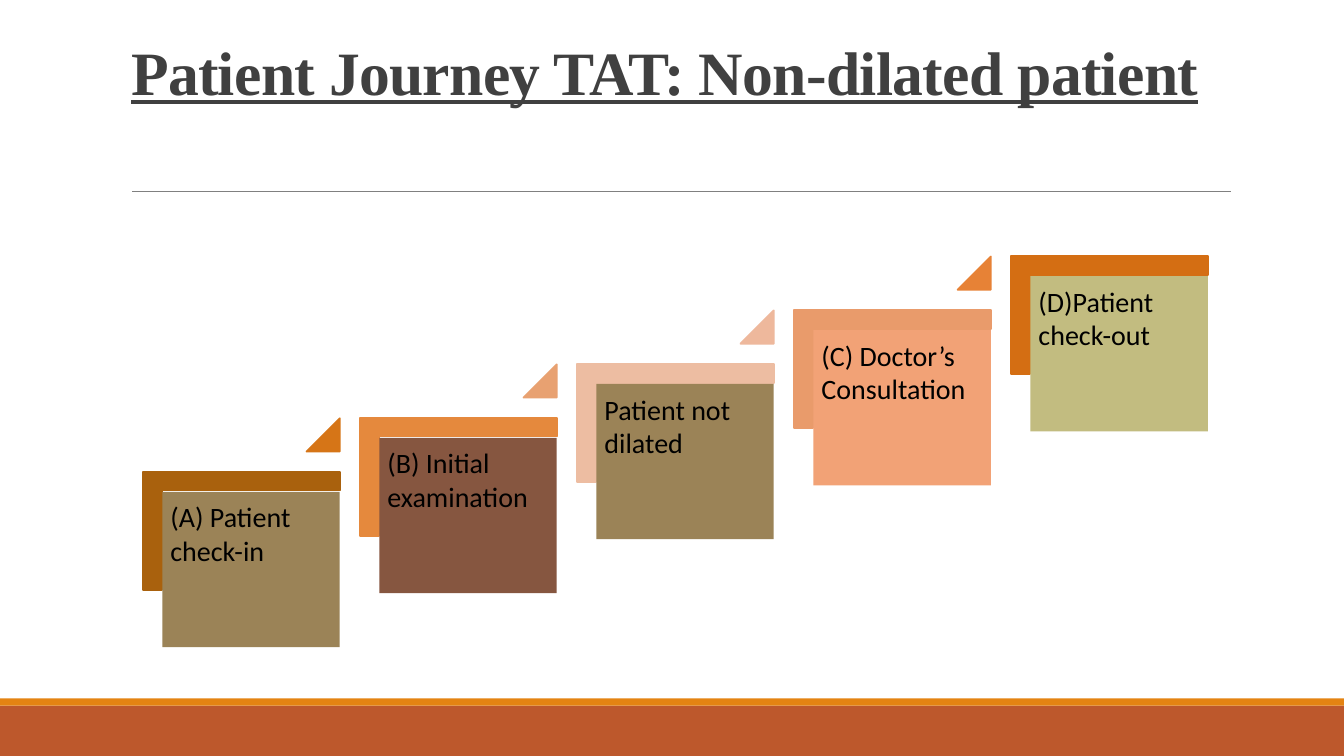
"""Build the patient journey slide: a staircase of five steps."""
from dataclasses import dataclass

from lxml import etree
from pptx import Presentation
from pptx.dml.color import RGBColor
from pptx.enum.shapes import MSO_CONNECTOR, MSO_SHAPE
from pptx.enum.text import MSO_ANCHOR, MSO_AUTO_SIZE, PP_ALIGN
from pptx.oxml.ns import qn
from pptx.util import Inches, Pt

RECT = MSO_SHAPE.RECTANGLE
CORNER = MSO_SHAPE.CORNER
TRIANGLE = MSO_SHAPE.ISOSCELES_TRIANGLE
STRAIGHT = MSO_CONNECTOR.STRAIGHT
LEFT = PP_ALIGN.LEFT
TOP, BOTTOM = MSO_ANCHOR.TOP, MSO_ANCHOR.BOTTOM
NO_AUTOFIT = MSO_AUTO_SIZE.NONE

WIDTH, HEIGHT = 13.33, 7.5
COL, ROW = 8.61 / 4, 2.14 / 4
FIRST_LEFT, FIRST_TOP = 1.61, 4.88

COLORS = {
    "title": "404040", "text": "000000", "rule": "808080",
    "band": "BD582C", "stripe": "E48312",
    "brown": "A9610D", "amber": "D67517", "orange": "E5893D",
    "apricot": "E8A171", "blush": "EDBDA2", "rose": "EEB89C",
    "peach": "E99B6B", "tangerine": "E78236", "rust": "D46E13",
    "khaki": "9B8357", "cocoa": "865640", "salmon": "F2A276",
    "olive": "C2BC80",
}


@dataclass(frozen=True)
class Box:
    left: float
    top: float
    width: float
    height: float

    def emu(self) -> tuple:
        return tuple(Inches(v) for v in
                     (self.left, self.top, self.width, self.height))


@dataclass(frozen=True)
class Step:
    text: str
    card: str
    corner: str
    arrow: str = ""


STEPS = [
    Step("(A) Patient check-in", "khaki", "brown", "amber"),
    Step("(B) Initial examination", "cocoa", "orange", "apricot"),
    Step("Patient not dilated", "khaki", "blush", "rose"),
    Step("(C) Doctor’s Consultation", "salmon", "peach", "tangerine"),
    Step("(D)Patient check-out", "olive", "rust"),
]


def rgb(name: str) -> RGBColor:
    return RGBColor.from_string(COLORS[name])


def add_block(s, kind, box: Box, color: str, outlined: bool = False):
    sp = s.shapes.add_shape(kind, *box.emu())
    sp.shadow.inherit = False
    sp.fill.solid()
    sp.fill.fore_color.rgb = rgb(color)
    if outlined:
        sp.line.color.rgb = rgb(color)
        sp.line.width = Pt(1.25)
    else:
        sp.line.fill.background()
    return sp


def add_frame(s) -> None:
    add_block(s, RECT, Box(0, 7, WIDTH, 0.5), "band")
    add_block(s, RECT, Box(0, 6.93, WIDTH, 0.07), "stripe")
    rule = s.shapes.add_connector(
        STRAIGHT, Inches(1.31), Inches(1.9), Inches(12.21), Inches(1.9))
    rule.line.color.rgb = rgb("rule")
    rule.line.width = Pt(0.5)
    etree.SubElement(rule._element.spPr, qn("a:effectLst"))


def add_title(s, text: str) -> None:
    title = s.shapes.title
    title.left, title.top, title.width, title.height = Box(
        1.2, 0.31, 11, 1.59).emu()
    tf = title.text_frame
    tf.word_wrap = True
    tf.auto_size = NO_AUTOFIT
    tf.vertical_anchor = BOTTOM
    tf.margin_bottom = Inches(0.83)
    p = tf.paragraphs[0]
    p.alignment = LEFT
    p.line_spacing = 0.85
    r = p.add_run()
    r.text = text
    r.font.name = "Times New Roman"
    r.font.size = Pt(44)
    r.font.bold = r.font.underline = True
    r.font.color.rgb = rgb("title")
    r._r.get_or_add_rPr().set("spc", "-50")


def add_step(s, index: int, step: Step) -> None:
    left = FIRST_LEFT + index * COL
    top = FIRST_TOP - index * ROW
    corner = add_block(s, CORNER, Box(left + 0.2, top - 0.59, 1.17, 1.95),
                       step.corner, outlined=True)
    corner.rotation = 90
    corner.adjustments[0] = corner.adjustments[1] = 0.16

    card = add_block(s, RECT, Box(left, top, 1.76, 1.54), step.card)
    tf = card.text_frame
    tf.word_wrap = True
    tf.vertical_anchor = TOP
    tf.margin_left = tf.margin_right = Inches(0.08)
    tf.margin_top = tf.margin_bottom = Inches(0.08)
    p = tf.paragraphs[0]
    p.text = step.text
    p.alignment = LEFT
    p.font.name = "Calibri"
    p.font.size = Pt(20)
    p.font.color.rgb = rgb("text")

    if step.arrow:
        arrow = add_block(s, TRIANGLE, Box(left + 1.43, top - 0.73, 0.33, 0.33),
                          step.arrow, outlined=True)
        arrow.adjustments[0] = 1


def main() -> None:
    prs = Presentation()
    prs.slide_width, prs.slide_height = Inches(WIDTH), Inches(HEIGHT)
    s = prs.slides.add_slide(prs.slide_layouts[5])
    add_frame(s)
    add_title(s, "Patient Journey TAT: Non-dilated patient")
    for index, step in enumerate(STEPS):
        add_step(s, index, step)
    prs.save("out.pptx")


if __name__ == "__main__":
    main()
